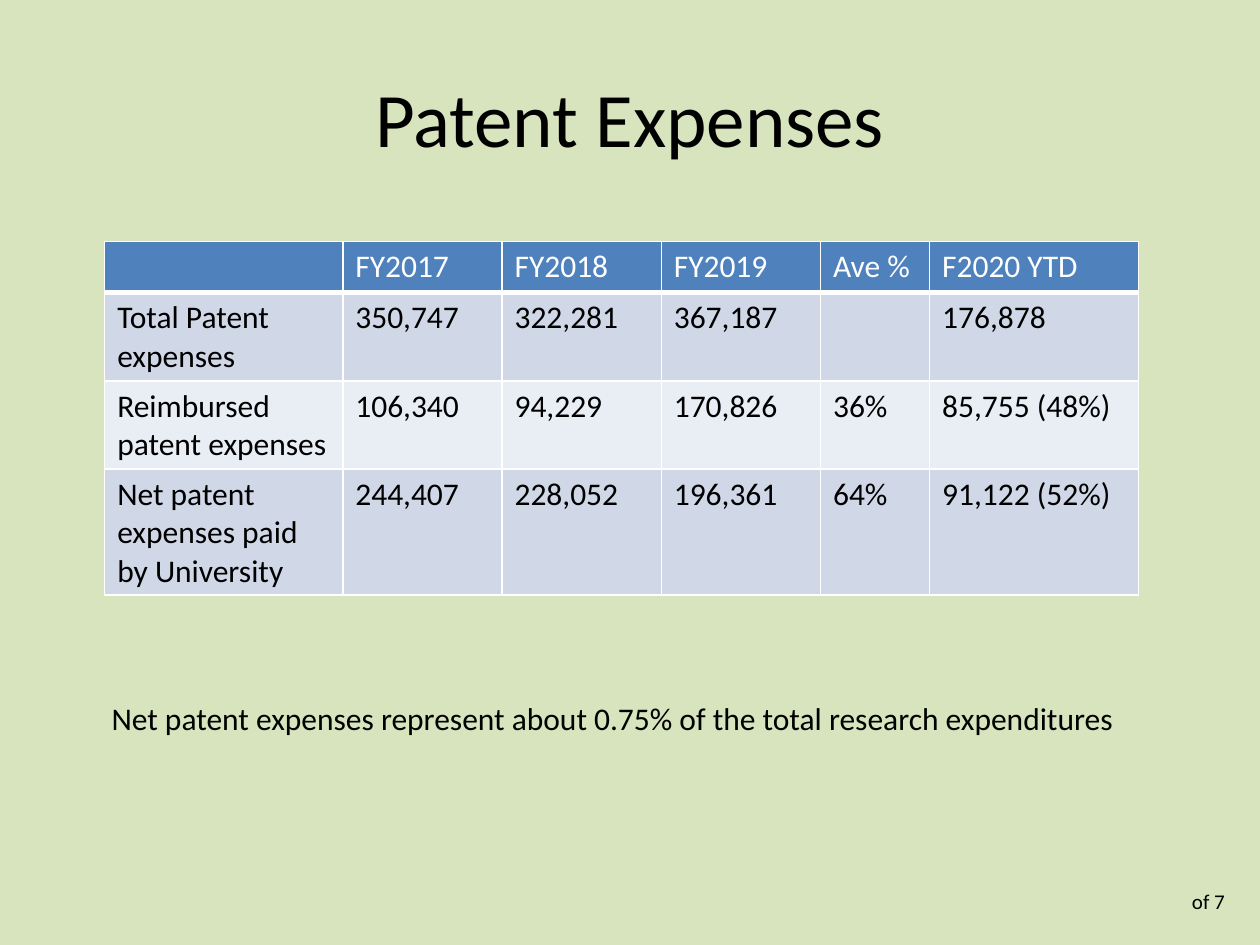
from lxml import etree
from pptx import Presentation
from pptx.dml.color import RGBColor
from pptx.enum.text import MSO_ANCHOR, MSO_AUTO_SIZE, PP_ALIGN
from pptx.oxml.ns import qn
from pptx.util import Cm, Pt

LEFT, CENTER = PP_ALIGN.LEFT, PP_ALIGN.CENTER
TOP, MIDDLE = MSO_ANCHOR.TOP, MSO_ANCHOR.MIDDLE
FIT_SHAPE = MSO_AUTO_SIZE.SHAPE_TO_FIT_TEXT

FONT = "Calibri"
COLORS = {
    "background": "D7E4BD",
    "text": "000000",
    "white": "FFFFFF",
    "header": "4F81BD",
    "band_dark": "D0D8E8",
    "band_light": "E9EDF4",
}

EXPENSES = [
    ["", "FY2017", "FY2018", "FY2019", "Ave %", "F2020 YTD"],
    ["Total Patent expenses", "350,747", "322,281", "367,187", "", "176,878"],
    ["Reimbursed patent expenses", "106,340", "94,229", "170,826", "36%", "85,755 (48%)"],
    ["Net patent expenses paid by University", "244,407", "228,052", "196,361", "64%",
     "91,122 (52%)"],
]
COLUMN_WIDTHS = [4.8, 3.21, 3.21, 3.21, 2.2, 4.21]
ROW_HEIGHT = 1.03


def rgb(name):
    return RGBColor.from_string(COLORS[name])


def write(frame, text, size=18, color="text", align=LEFT):
    """Put one formatted paragraph into a text frame."""
    paragraph = frame.paragraphs[0]
    paragraph.alignment = align
    run = paragraph.add_run()
    run.text = text
    run.font.name = FONT
    run.font.size = Pt(size)
    run.font.bold = False
    run.font.color.rgb = rgb(color)


def add_borders(cell, bottom=1):
    """Give a cell white borders, with its own width at the bottom."""
    properties = cell._tc.get_or_add_tcPr()
    for side, width in (("lnL", 1), ("lnR", 1), ("lnT", 1), ("lnB", bottom)):
        line = etree.SubElement(properties, qn(f"a:{side}"), w=str(Pt(width)))
        fill = etree.SubElement(line, qn("a:solidFill"))
        etree.SubElement(fill, qn("a:srgbClr"), val=COLORS["white"])


class SlideBuilder:
    def __init__(self, slide):
        self.slide = slide
        background = slide.background.fill
        background.solid()
        background.fore_color.rgb = rgb("background")

    def text(self, text, left, top, width, height, anchor=TOP, wrap=True,
             side_inset=0.25, **style):
        box = self.slide.shapes.add_textbox(Cm(left), Cm(top), Cm(width), Cm(height))
        frame = box.text_frame
        frame.word_wrap = wrap
        if not wrap:
            frame.auto_size = FIT_SHAPE
        frame.vertical_anchor = anchor
        frame.margin_left = frame.margin_right = Cm(side_inset)
        write(frame, text, **style)

    def table(self, rows, left, top, widths, row_height, height):
        table_frame = self.slide.shapes.add_table(
            len(rows), len(widths), Cm(left), Cm(top), Cm(sum(widths)), Cm(height))
        table = table_frame.table
        for column, width in zip(table.columns, widths):
            column.width = Cm(width)
        for r, values in enumerate(rows):
            table.rows[r].height = Cm(row_height)
            is_header = r == 0
            band = "header" if is_header else ("band_light", "band_dark")[r % 2]
            for c, value in enumerate(values):
                cell = table.cell(r, c)
                add_borders(cell, bottom=3 if is_header else 1)
                cell.fill.solid()
                cell.fill.fore_color.rgb = rgb(band)
                write(cell.text_frame, value, color="white" if is_header else "text")
        table_frame.height = Cm(height)


def main():
    deck = Presentation()
    deck.slide_width, deck.slide_height = Cm(25.4), Cm(19.05)
    builder = SlideBuilder(deck.slides.add_slide(deck.slide_layouts[6]))

    # Page count
    builder.text("of 7", 24, 17.78, 1.17, 0.76, anchor=MIDDLE, side_inset=0.03, size=12)

    # Title
    builder.text("Patent Expenses", 1.27, 0.76, 22.86, 3.18,
                 anchor=MIDDLE, size=44, align=CENTER)

    # Expenses by fiscal year
    builder.table(EXPENSES, 2.11, 4.87, COLUMN_WIDTHS, ROW_HEIGHT, 7.14)

    # Closing note
    builder.text("Net patent expenses represent about 0.75% of the total research expenditures",
                 2, 13.97, 21.44, 1.03, wrap=False)

    deck.save("out.pptx")


if __name__ == "__main__":
    main()
